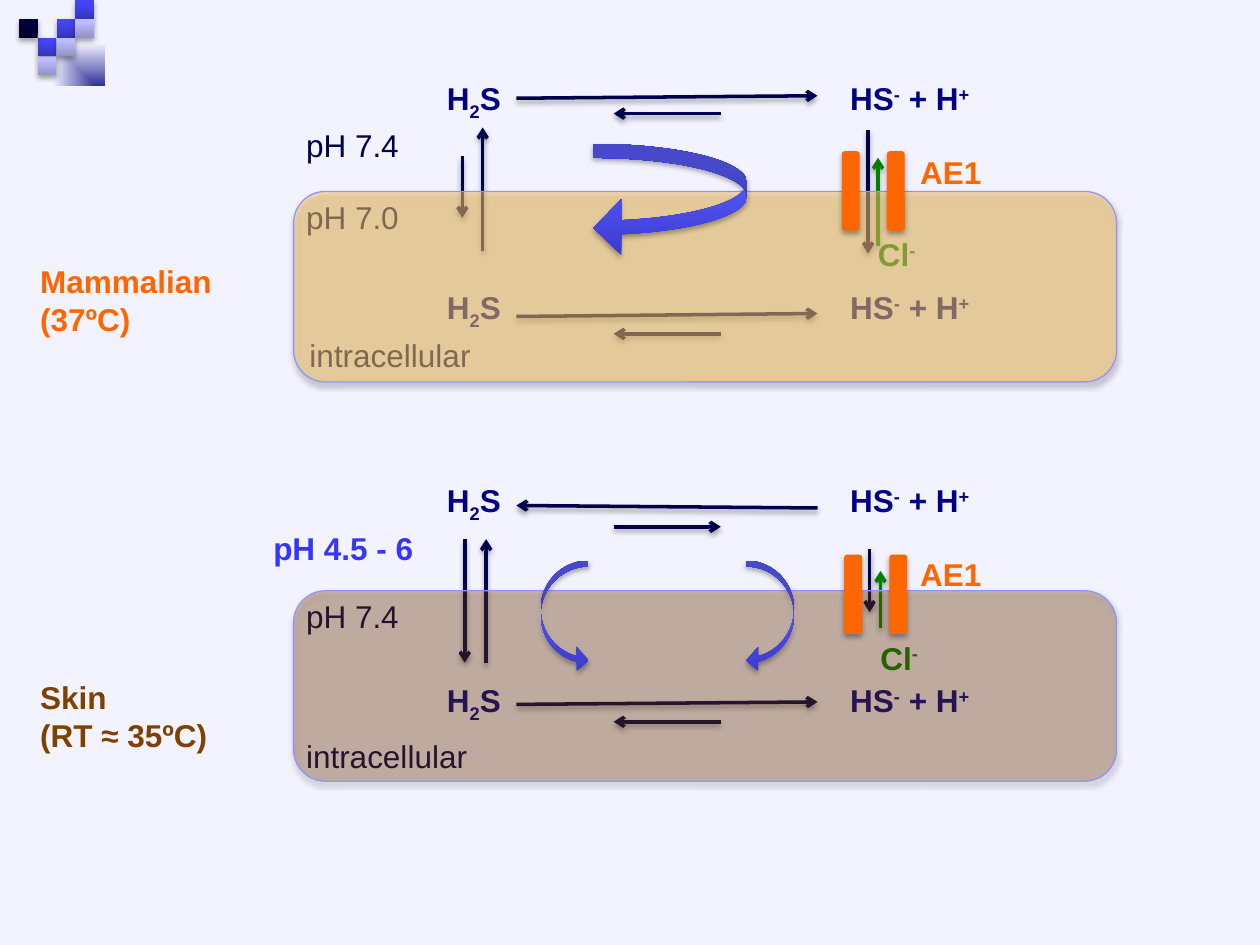
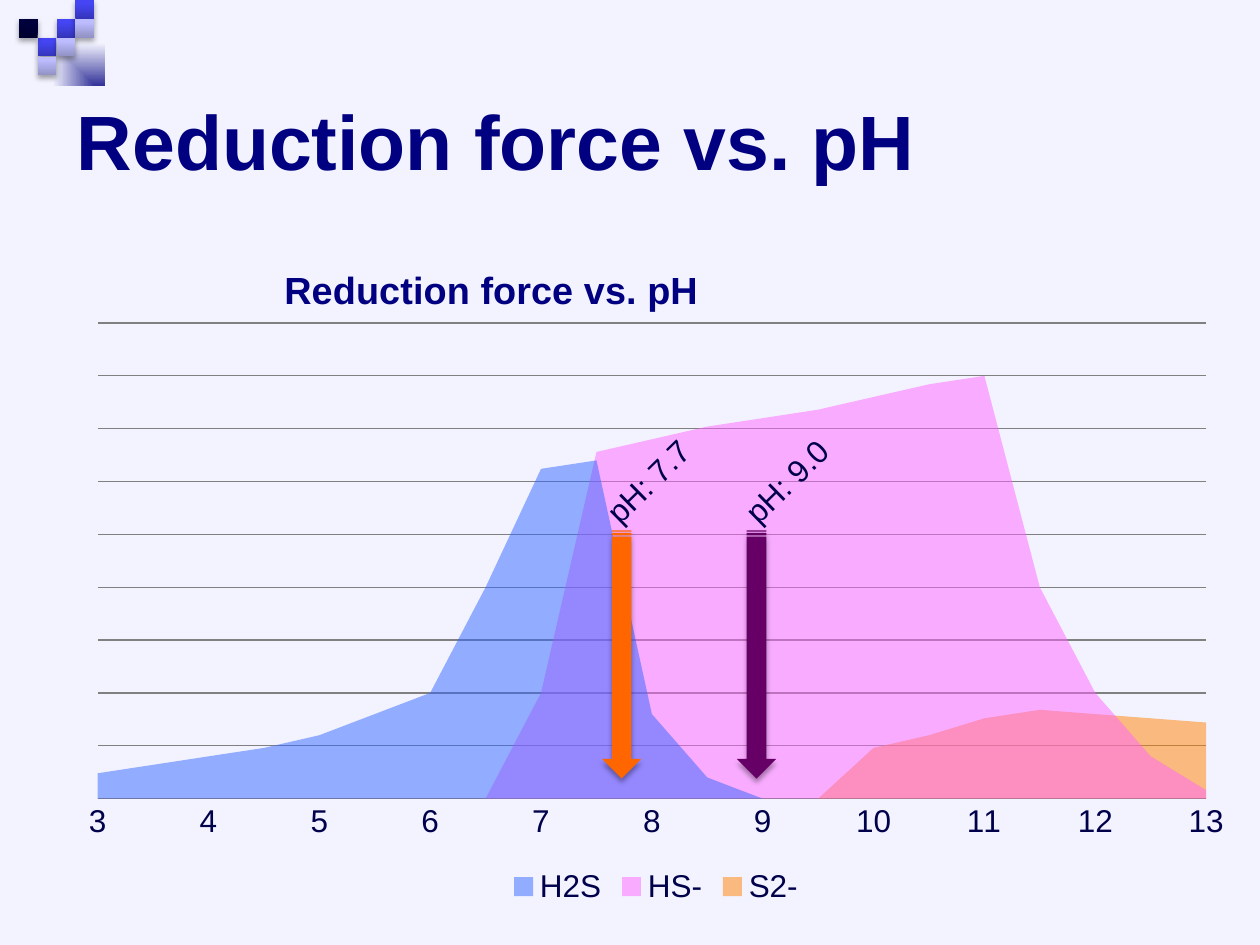
from copy import deepcopy

from lxml.etree import SubElement
from pptx import Presentation
from pptx.chart.data import CategoryChartData
from pptx.dml.color import RGBColor
from pptx.enum.chart import XL_CHART_TYPE, XL_LEGEND_POSITION, XL_TICK_MARK
from pptx.enum.shapes import MSO_CONNECTOR, MSO_SHAPE
from pptx.enum.text import MSO_ANCHOR
from pptx.oxml import parse_xml
from pptx.oxml.ns import nsdecls, qn
from pptx.util import Cm, Pt

FONT = "Arial"
BACKGROUND = RGBColor(0xF3, 0xF3, 0xFF)
INK = RGBColor(0x00, 0x00, 0x4B)
NAVY = RGBColor(0x00, 0x00, 0x80)
BLUE = RGBColor(0x35, 0x35, 0xFF)
ORANGE = RGBColor(0xFF, 0x66, 0x00)
BROWN = RGBColor(0x80, 0x40, 0x00)
GREEN = RGBColor(0x00, 0x80, 0x00)
PURPLE = RGBColor(0x66, 0x00, 0x66)
SAND = RGBColor(0xFF, 0xCC, 0x66)
PANEL_EDGE = RGBColor(0x93, 0x93, 0xFC)
GRID_GREY = RGBColor(0x80, 0x80, 0x80)
CORNER_BLUE = RGBColor(0x33, 0x33, 0x99)
H2S_BLUE = RGBColor(0x33, 0x66, 0xFF)
HS_PINK = RGBColor(0xFF, 0x66, 0xFF)
S2_ORANGE = RGBColor(0xFF, 0x80, 0x00)

# Gradients run from bottom to top
BLUE_TILE = (RGBColor(0x35, 0x35, 0xBC), RGBColor(0x45, 0x45, 0xF4))
PALE_TILE = (RGBColor(0x91, 0x91, 0xC4), RGBColor(0xBC, 0xBC, 0xFF))
DARK_TILE = (RGBColor(0x00, 0x00, 0x2F), RGBColor(0x00, 0x00, 0x3D))
CYCLE_BLUE = (RGBColor(0x3B, 0x3B, 0xCF), RGBColor(0x5B, 0x5B, 0xFF))

SHADOW = parse_xml(
    f'<a:effectLst {nsdecls("a")}><a:outerShdw blurRad="39400" dist="22900" dir="5400000" '
    'rotWithShape="0"><a:srgbClr val="000000"><a:alpha val="35000"/></a:srgbClr>'
    '</a:outerShdw></a:effectLst>')


def add_text(slide, box, lines, color=INK, bold=False, size=18):
    """Each line is a list of runs; a leading _ lowers a run and ^ raises it."""
    text_box = slide.shapes.add_textbox(*map(Cm, box))
    frame = text_box.text_frame
    frame.word_wrap = True
    for number, line in enumerate(lines):
        paragraph = frame.add_paragraph() if number else frame.paragraphs[0]
        for part in line:
            run = paragraph.add_run()
            run.text = part.lstrip("_^")
            font = run.font
            font.name, font.size, font.bold = FONT, Pt(size), bold
            font.color.rgb = color
            if part[0] in "_^":
                run._r.get_or_add_rPr().set("baseline", "-25000" if part[0] == "_" else "30000")
    return text_box


def add_block(slide, preset, box, fill, alpha=None, edge=None):
    """Shadowed shape with a plain fill, or a gradient when fill is a pair."""
    block = slide.shapes.add_shape(preset, *map(Cm, box))
    if isinstance(fill, RGBColor):
        block.fill.solid()
        block.fill.fore_color.rgb = fill
    else:
        block.fill.gradient()
        block.fill.gradient_angle = 90
        stops = block.fill.gradient_stops
        stops[0].color.rgb, stops[1].color.rgb = fill
        stops[1].position = 0.8
    if alpha:
        color = block._element.spPr.find(".//" + qn("a:srgbClr"))
        SubElement(color, qn("a:alpha"), val=str(alpha * 1000))
    if edge:
        block.line.color.rgb = edge
        block.line.width = Pt(0.75)
    else:
        block.line.fill.background()
    block._element.spPr.append(deepcopy(SHADOW))
    return block


prs = Presentation()
prs.slide_width, prs.slide_height = Cm(25.4), Cm(19.05)

# Shared background and corner mosaic
TILE = 0.38
TILES = [(3, 1, BLUE_TILE), (4, 0, BLUE_TILE), (4, 1, PALE_TILE), (2, 2, BLUE_TILE),
         (1, 1, DARK_TILE), (3, 2, PALE_TILE), (2, 3, PALE_TILE)]
for _ in range(2):
    slide = prs.slides.add_slide(prs.slide_layouts[6])
    slide.background.fill.solid()
    slide.background.fill.fore_color.rgb = BACKGROUND
    corner = slide.shapes.add_shape(MSO_SHAPE.RECTANGLE, 0, 0, Cm(2.11), Cm(1.73))
    corner.shadow.inherit = False
    corner.line.fill.background()
    corner.fill.gradient()
    inner, outer = corner.fill.gradient_stops
    inner.color.rgb, outer.color.rgb = CORNER_BLUE, BACKGROUND
    gradient = corner._element.spPr.find(qn("a:gradFill"))
    gradient.replace(gradient.find(qn("a:lin")), parse_xml(
        f'<a:path {nsdecls("a")} path="rect"><a:fillToRect l="100000" t="100000"/></a:path>'))
    for column, row, tile_fill in TILES:
        add_block(slide, MSO_SHAPE.RECTANGLE, (column * TILE, row * TILE, TILE, TILE), tile_fill)
cycle_slide, chart_slide = prs.slides

# Slide 1: sulfide cycle in mammalian and skin cells
LINE_HEIGHT = 1.02
for left, top, width, lines, color, bold in [
    (0.56, 5.16, 4.14, [["Mammalian (37ºC)"]], ORANGE, True),
    (0.56, 13.54, 4.14, [["Skin"], ["(RT ≈ 35ºC)"]], BROWN, True),
    (5.92, 2.41, 3.48, [["pH 7.4"]], INK, False),
    (5.92, 3.86, 3.48, [["pH 7.0"]], INK, False),
    (5.26, 10.54, 5.41, [["pH 4.5 - 6"]], BLUE, True),
    (5.92, 11.91, 3.48, [["pH 7.4"]], INK, False),
    (5.99, 6.65, 5.51, [["intracellular"]], INK, False),
    (5.92, 14.73, 5.51, [["intracellular"]], INK, False),
    (17.45, 4.62, 1.65, [["Cl", "^-"]], GREEN, True),
    (17.5, 12.75, 1.65, [["Cl", "^-"]], GREEN, True),
]:
    add_text(cycle_slide, (left, top, width, LINE_HEIGHT), lines, color, bold)

for top in (1.47, 5.69, 9.58, 13.61):
    add_text(cycle_slide, (8.76, top, 1.65, LINE_HEIGHT), [["H", "_2", "S"]], NAVY, True)
    add_text(cycle_slide, (16.89, top, 3.02, LINE_HEIGHT),
             [["HS", "^-", " + H", "^+"]], NAVY, True)

LONG_LEFT, LONG_RIGHT = 10.41, 16.48
SHORT_LEFT, SHORT_RIGHT = 12.37, 14.53
for x1, y1, x2, y2, color in [
    (LONG_LEFT, 1.98, LONG_RIGHT, 1.93, INK),
    (LONG_LEFT, 6.38, LONG_RIGHT, 6.32, INK),
    (LONG_RIGHT, 10.24, LONG_LEFT, 10.19, INK),
    (LONG_LEFT, 14.2, LONG_RIGHT, 14.15, INK),
    (SHORT_RIGHT, 2.29, SHORT_LEFT, 2.29, INK),
    (SHORT_RIGHT, 6.73, SHORT_LEFT, 6.73, INK),
    (SHORT_LEFT, 10.62, SHORT_RIGHT, 10.62, INK),
    (SHORT_RIGHT, 14.55, SHORT_LEFT, 14.55, INK),
    (9.32, 3.15, 9.32, 4.39, INK),
    (9.73, 5.05, 9.73, 2.57, INK),
    (9.37, 10.87, 9.37, 13.36, INK),
    (9.8, 13.36, 9.8, 10.87, INK),
    (17.5, 2.62, 17.5, 5.11, INK),
    (17.7, 4.95, 17.7, 3.18, GREEN),
    (17.53, 11.07, 17.53, 12.34, INK),
    (17.75, 12.65, 17.75, 11.51, GREEN),
]:
    arrow = cycle_slide.shapes.add_connector(
        MSO_CONNECTOR.STRAIGHT, Cm(x1), Cm(y1), Cm(x2), Cm(y2))
    arrow.line.color.rgb = color
    arrow.line.width = Pt(2)
    SubElement(arrow.line._get_or_add_ln(), qn("a:tailEnd"), type="arrow")
    arrow._element.spPr.append(deepcopy(SHADOW))

# Translucent cells lie over the reactions; the AE1 channels lie over the cells
for cell_top, cell_fill, alpha, channel_left, channel_top, label_top in [
    (3.86, SAND, 51, 16.97, 3.05, 2.97),
    (11.91, BROWN, 30, 17.02, 11.18, 11.07),
]:
    add_block(cycle_slide, MSO_SHAPE.ROUNDED_RECTANGLE, (5.92, cell_top, 16.59, 3.84),
              cell_fill, alpha, PANEL_EDGE)
    for offset in (0, 0.91):
        add_block(cycle_slide, MSO_SHAPE.ROUNDED_RECTANGLE,
                  (channel_left + offset, channel_top, 0.36, 1.6), ORANGE)
    add_text(cycle_slide, (18.3, label_top, 3.35, LINE_HEIGHT), [["AE1"]], ORANGE, True)

for left, top, width, mirrored in [(11.96, 2.9, 3.1, False), (10.9, 11.3, 0.97, True),
                                   (15.04, 11.3, 0.97, False)]:
    cycle = add_block(cycle_slide, MSO_SHAPE.CURVED_LEFT_ARROW, (left, top, width, 2.26),
                      CYCLE_BLUE)
    for index, value in enumerate((0.126, 0.5, 0.25)):
        cycle.adjustments[index] = value
    if mirrored:
        cycle._element.spPr.find(qn("a:xfrm")).set("flipH", "1")

# Slide 2: reduction force chart
heading = add_text(chart_slide, (1.3, 0.91, 23.9, 3.81), [["Reduction force vs. pH"]],
                   NAVY, True, 44)
heading.text_frame.vertical_anchor = MSO_ANCHOR.MIDDLE

data = CategoryChartData()
data.categories = [str(3 + step // 2) if step % 2 == 0 else "" for step in range(21)]
data.add_series("H2S", [6, 8, 10, 12, 15, 20, 25, 50, 78, 80, 20, 5, 0] + [None] * 8)
data.add_series("HS-", [None] * 8 + [25, 82, 85, 88, 90, 92, 95, 98, 100, 50, 25, 10, 2])
data.add_series("S2-", [None] * 14 + [12, 15, 19, 21, 20, 19, 18])
chart = chart_slide.shapes.add_chart(
    XL_CHART_TYPE.AREA, Cm(1.3), Cm(4.52), Cm(23.85), Cm(13.84), data).chart
chart.font.name, chart.font.size = FONT, Pt(18)
chart.font.color.rgb = INK
chart.plots[0].vary_by_categories = False
for series, color in zip(chart.plots[0].series, (H2S_BLUE, HS_PINK, S2_ORANGE)):
    series.format.fill.solid()
    series.format.fill.fore_color.rgb = color
    SubElement(series._element.find(".//" + qn("a:srgbClr")), qn("a:alpha"), val="50000")

ph_axis, force_axis = chart.category_axis, chart.value_axis
ph_axis.major_tick_mark = ph_axis.minor_tick_mark = XL_TICK_MARK.NONE
ph_axis.has_major_gridlines = False
force_axis.visible = False
force_axis.minimum_scale, force_axis.maximum_scale = 0, 112.5
force_axis.major_unit = 12.5
force_axis.has_major_gridlines = True
for line in (ph_axis.format.line, force_axis.major_gridlines.format.line):
    line.color.rgb = GRID_GREY
    line.width = Pt(0.75)

chart.has_legend = True
chart.legend.position = XL_LEGEND_POSITION.BOTTOM
chart.legend.include_in_layout = False
chart.has_title = True
title_run = chart.chart_title.text_frame.paragraphs[0].add_run()
title_run.text = "Reduction force vs. pH"
title_run.font.name, title_run.font.size, title_run.font.bold = FONT, Pt(21.6), True
title_run.font.color.rgb = NAVY

chart_xml = chart._chartSpace.find(qn("c:chart"))
for tag, index, places in [
    ("c:title", 1, {"xMode": "edge", "yMode": "edge", "x": 0.18, "y": 0.05}),
    ("c:plotArea", 0, {"layoutTarget": "inner", "xMode": "edge", "yMode": "edge",
                       "x": 0.028, "y": 0.144, "w": 0.937, "h": 0.693}),
]:
    part = chart_xml.find(qn(tag))
    for old_layout in part.findall(qn("c:layout")):
        part.remove(old_layout)
    layout = parse_xml(f'<c:layout {nsdecls("c")}><c:manualLayout/></c:layout>')
    for name, value in places.items():
        SubElement(layout[0], qn("c:" + name), val=str(value))
    part.insert(index, layout)
chart_xml.find(qn("c:dispBlanksAs")).set("val", "zero")

for arrow_left, label_left, label, color in [(10.03, 11.71, "pH: 7.7", ORANGE),
                                             (12.75, 14.5, "pH: 9.0", PURPLE)]:
    marker = add_block(chart_slide, MSO_SHAPE.STRIPED_RIGHT_ARROW,
                       (arrow_left, 12.8, 5, 0.79), color)
    marker.rotation = 90
    add_text(chart_slide, (label_left, 9.12, 2.79, 0.91), [[label]]).rotation = 315.5

prs.save("out.pptx")
